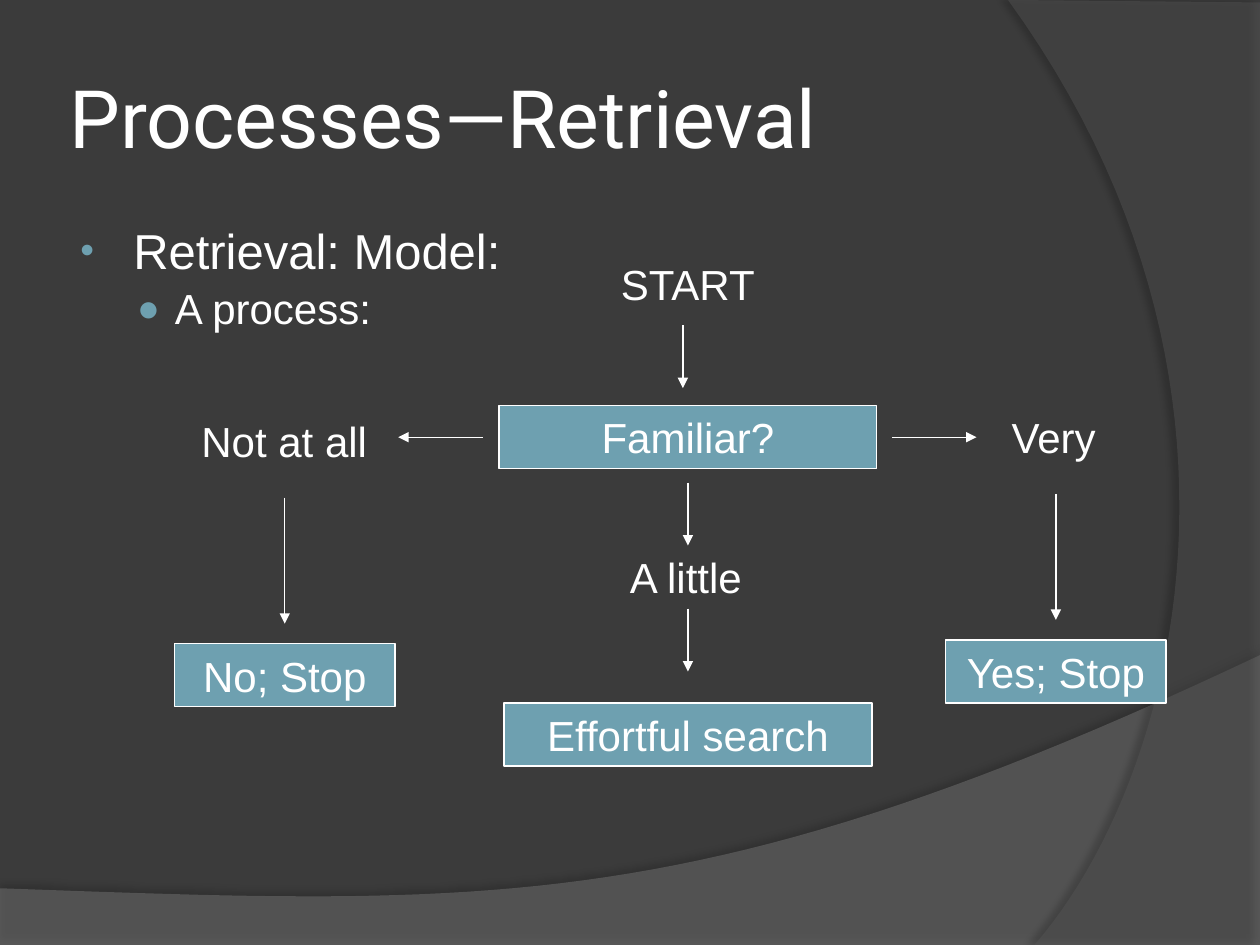
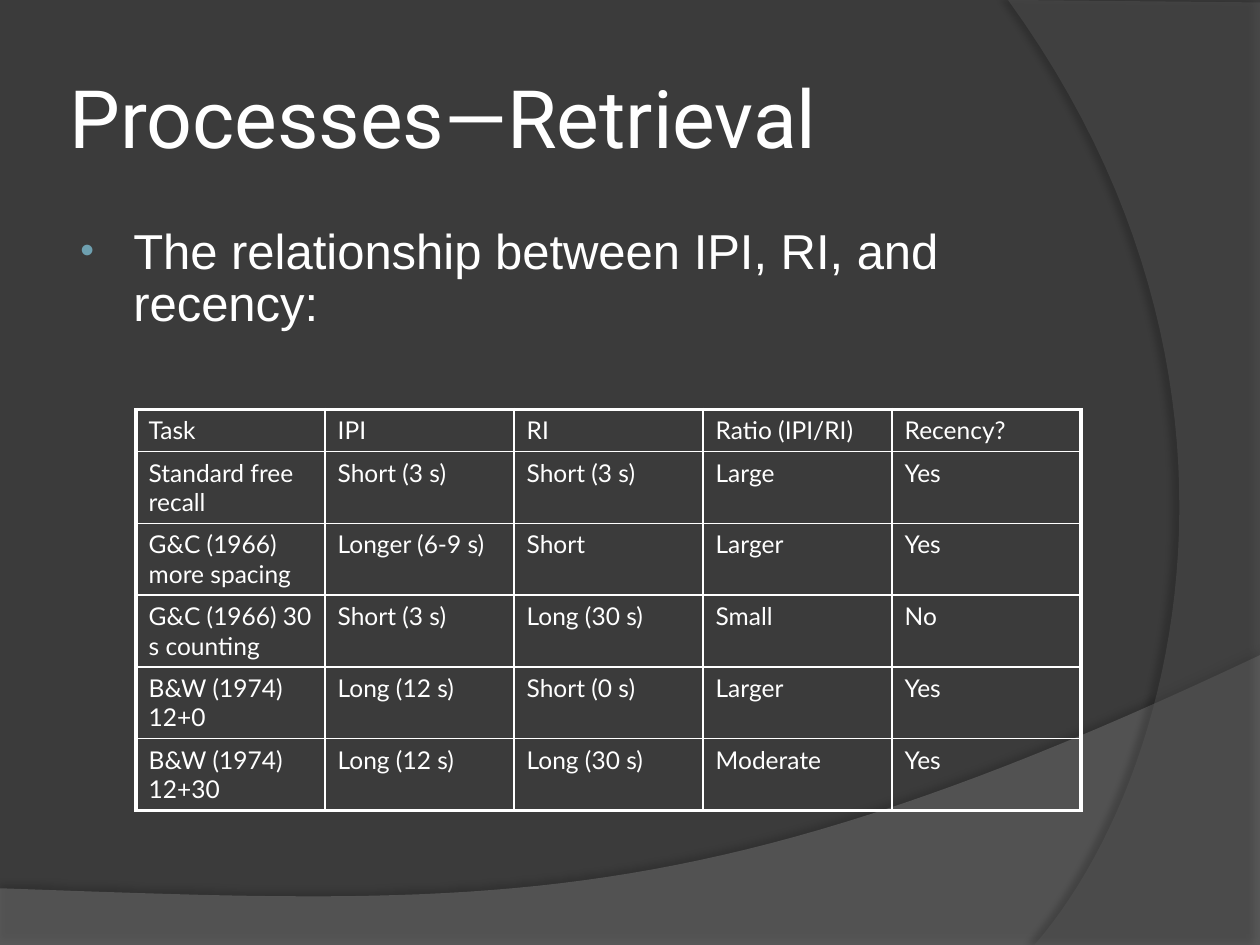
from dataclasses import dataclass

from lxml.etree import SubElement as Sub
from pptx import Presentation
from pptx.dml.color import RGBColor as Rgb
from pptx.enum.shapes import MSO_CONNECTOR as Link, MSO_SHAPE as Form
from pptx.enum.text import MSO_ANCHOR as Anchor, MSO_AUTO_SIZE as Fit, PP_ALIGN as Align
from pptx.oxml.ns import qn
from pptx.util import Emu, Inches, Pt


@dataclass(frozen=True)
class Theme:
    back: str = "3B3B3B"
    ink: str = "FFFFFF"
    teal: str = "6EA0B0"
    wave: str = "7C7C7C"
    arc: str = "595959"
    shade: str = "000000"
    head: str = "Roboto"
    body: str = "Arial"
    grid: str = "Lato"
    title: int = 46
    lead: int = 28
    text: int = 24
    cell: int = 14
    thin: float = 0.75
    rule: float = 1
    frame: float = 2.25


THEME = Theme()
TITLE = "Processes—Retrieval"
ROW = 0.5  # height of each step in the flow


def add(parent, tag, **attrs):
    node = Sub(parent, qn(tag))
    for key, val in attrs.items():
        node.set(key, str(val))
    return node


def tint(parent, color, alpha=None):
    node = add(parent, "a:srgbClr", val=color)
    if alpha is not None:
        add(node, "a:alpha", val=alpha * 1000)


def write(par, text, size=THEME.text, font=THEME.body, color=THEME.ink, align=Align.LEFT):
    par.alignment = align
    run = par.add_run()
    run.text = text
    run.font.size = Pt(size)
    run.font.name = font
    run.font.bold = False
    run.font.color.rgb = Rgb.from_string(color)


def bezier(ends, steps=48):
    """Points along a cubic curve, after its start."""
    for i in range(1, steps + 1):
        t = i / steps
        parts = ((1 - t) ** 3, 3 * t * (1 - t) ** 2, 3 * t * t * (1 - t), t ** 3)
        yield tuple(sum(w * p[k] for w, p in zip(parts, ends)) for k in (0, 1))


class Deck:
    def __init__(self, theme):
        self.theme = theme
        self.prs = Presentation()
        self.prs.slide_width, self.prs.slide_height = Inches(10), Inches(7.5)
        self.slide = None
        fill = self.prs.slide_master.background.fill
        fill.solid()
        fill.fore_color.rgb = Rgb.from_string(theme.back)

    def page(self, title):
        self.slide = self.prs.slides.add_slide(self.prs.slide_layouts[5])
        box = self.slide.shapes.title
        box.left, box.top, box.width, box.height = map(Inches, (0.5, 0.3, 8.17, 1.25))
        frame = box.text_frame
        frame.auto_size, frame.vertical_anchor = Fit.NONE, Anchor.MIDDLE
        frame.margin_left = frame.margin_right = Inches(0.05)
        frame.margin_top = frame.margin_bottom = Inches(0.05)
        write(frame.paragraphs[0], title, size=self.theme.title, font=self.theme.head)

    def band(self, rank, edge, curve, color, alpha, shade):
        """Draw a translucent band and move it to the master, behind all else."""
        depth, gap, turn = shade
        dots = [tuple(map(Inches, p)) for p in (*edge, *bezier((edge[-1], *curve)))]
        pen = self.slide.shapes.build_freeform(*dots[0], scale=1.0)
        pen.add_line_segments(dots[1:], close=True)
        shape = pen.convert_to_shape()
        shape.fill.solid()
        shape.fill.fore_color.rgb = Rgb.from_string(color)
        shape.line.fill.background()
        shape.shadow.inherit = False
        props = shape._element.spPr
        add(props.find(".//" + qn("a:srgbClr")), "a:alpha", val=alpha * 1000)
        cast = add(props.find(qn("a:effectLst")), "a:outerShdw", blurRad=Pt(4),
                   dist=Pt(gap), dir=turn * 60000, algn="ctr", rotWithShape=0)
        tint(cast, self.theme.shade, depth)
        shape._element.nvSpPr.cNvPr.set("id", str(20 + rank))
        self.prs.slide_master.shapes._spTree.insert(2 + rank, shape._element)

    def bullets(self, *items):
        """Each item is (level, text)."""
        looks = ((self.theme.lead, 0.46, -0.42, "•", 80), (self.theme.text, 0.79, -0.3, "●", 90))
        box = self.slide.shapes.add_textbox(*map(Inches, (0.5, 1.75, 8.17, 4.95)))
        frame = box.text_frame
        frame.word_wrap = True
        for i, (level, text) in enumerate(items):
            size, left, hang, mark, scale = looks[level]
            par = frame.add_paragraph() if i else frame.paragraphs[0]
            write(par, text, size=size)
            par.level, par.line_spacing, par.space_before = level, 0.9, Pt(size * 0.2)
            props = par._p.get_or_add_pPr()
            props.set("marL", str(Inches(left)))
            props.set("indent", str(Inches(hang)))
            tint(add(props, "a:buClr"), self.theme.teal)
            add(props, "a:buSzPct", val=scale * 1000)
            add(props, "a:buFont", typeface=self.theme.body)
            add(props, "a:buChar", char=mark)

    def node(self, text, mid, top, wide):
        spot = map(Inches, (mid - wide / 2, top, wide, ROW))
        box = self.slide.shapes.add_shape(Form.RECTANGLE, *spot)
        box.shadow.inherit = False
        box.fill.solid()
        box.fill.fore_color.rgb = Rgb.from_string(self.theme.teal)
        box.line.color.rgb = Rgb.from_string(self.theme.ink)
        box.line.width = Pt(self.theme.thin)
        frame = box.text_frame
        frame.word_wrap, frame.vertical_anchor = False, Anchor.MIDDLE
        write(frame.paragraphs[0], text, align=Align.CENTER)

    def label(self, text, left, top, wide):
        box = self.slide.shapes.add_textbox(*map(Inches, (left, top, wide, ROW)))
        frame = box.text_frame
        frame.word_wrap, frame.auto_size = False, Fit.SHAPE_TO_FIT_TEXT
        write(frame.paragraphs[0], text)

    def arrow(self, x, y, dx=0, dy=0):
        ends = map(Inches, (x, y, x + dx, y + dy))
        link = self.slide.shapes.add_connector(Link.STRAIGHT, *ends)
        link.line.color.rgb = Rgb.from_string(self.theme.ink)
        link.line.width = Pt(self.theme.thin)
        add(link.line._get_or_add_ln(), "a:tailEnd", type="triangle")
        add(link._element.spPr, "a:effectLst")

    def border(self, cell, sides):
        """Set the left, right, top and bottom line widths of a cell."""
        props = cell._tc.get_or_add_tcPr()
        for i, (side, wide) in enumerate(zip("LRTB", sides)):
            line = add(props, "a:ln" + side, w=Pt(wide))
            tint(add(line, "a:solidFill"), self.theme.ink)
            props.insert(i, line)

    def table(self, rows, left, top, wide, highs):
        t = self.theme
        deep, across = len(rows), len(rows[0])
        spot = map(Inches, (left, top, wide, sum(highs)))
        grid = self.slide.shapes.add_table(deep, across, *spot).table
        grid.first_row = grid.horz_banding = False
        for col in grid.columns:
            col.width = Emu(Inches(wide) // across)
        for r, (row, high) in enumerate(zip(rows, highs)):
            grid.rows[r].height = Inches(high)
            for c, text in enumerate(row):
                cell = grid.cell(r, c)
                cell.fill.background()
                write(cell.text_frame.paragraphs[0], text, size=t.cell, font=t.grid)
                outer = (c == 0, c == across - 1, r == 0, r == deep - 1)
                self.border(cell, [t.frame if out else t.rule for out in outer])


def backdrop(deck):
    deck.band(0, [(0, 7.05), (0, 7.5), (10, 7.5), (10, 5.2)],
              [(5.59, 7.29), (3.91, 7.19), (0, 7.05)], THEME.wave, 45, (35, 3.5, 270))
    deck.band(1, [(10, 0.02), (10, 7.5), (8.21, 7.5)],
              [(9.35, 6.19), (10.18, 3), (8, 0)], THEME.arc, 40, (45, 4, 180))


def flow(deck):
    west, mid, east = 2.26, 5.46, 8.38
    deck.bullets((0, "Retrieval: Model:"), (1, "A process:"))
    for step in (("Familiar?", mid, 3.22, 3), ("No; Stop", west, 5.11, 1.75),
                 ("Yes; Stop", east, 5.08, 1.75), ("Effortful search", mid, 5.58, 2.92)):
        deck.node(*step)
    for tag in (("START", 4.83, 2, 1.27), ("Not at all", 1.5, 3.25, 1.52),
                ("Very", 7.93, 3.22, 0.89), ("A little", 4.9, 4.33, 1.11)):
        deck.label(*tag)
    for x, dx in ((3.83, -0.67), (7.08, 0.67)):
        deck.arrow(x, 3.47, dx=dx)
    for x, y, dy in ((5.42, 2.58, 0.5), (mid, 3.83, 0.5), (mid, 4.83, 0.5),
                     (west, 3.95, 1), (east, 3.92, 1)):
        deck.arrow(x, y, dy=dy)


def recency(deck):
    deck.bullets((0, "The relationship between IPI, RI, and recency:"))
    rows = (
        ("Task", "IPI", "RI", "Ratio (IPI/RI)", "Recency?"),
        ("Standard free recall", "Short (3 s)", "Short (3 s)", "Large", "Yes"),
        ("G&C (1966) more spacing", "Longer (6-9 s)", "Short", "Larger", "Yes"),
        ("G&C (1966) 30 s counting", "Short (3 s)", "Long (30 s)", "Small", "No"),
        ("B&W (1974) 12+0", "Long (12 s)", "Short (0 s)", "Larger", "Yes"),
        ("B&W (1974) 12+30", "Long (12 s)", "Long (30 s)", "Moderate", "Yes"),
    )
    deck.table(rows, 1.08, 3.25, 7.5, [0.33] + [0.57] * 5)


def main():
    deck = Deck(THEME)
    deck.page(TITLE)
    backdrop(deck)
    flow(deck)
    deck.page(TITLE)
    recency(deck)
    deck.prs.save("out.pptx")


if __name__ == "__main__":
    main()
